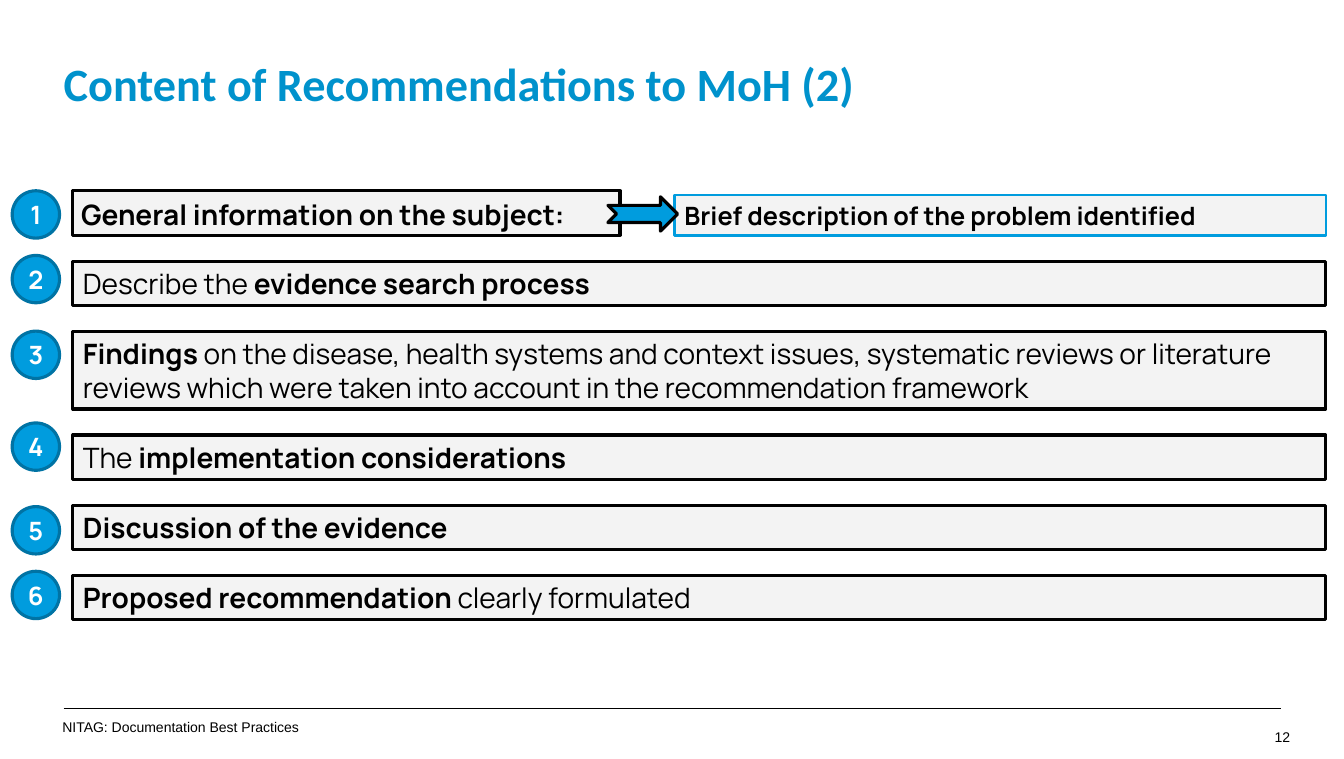
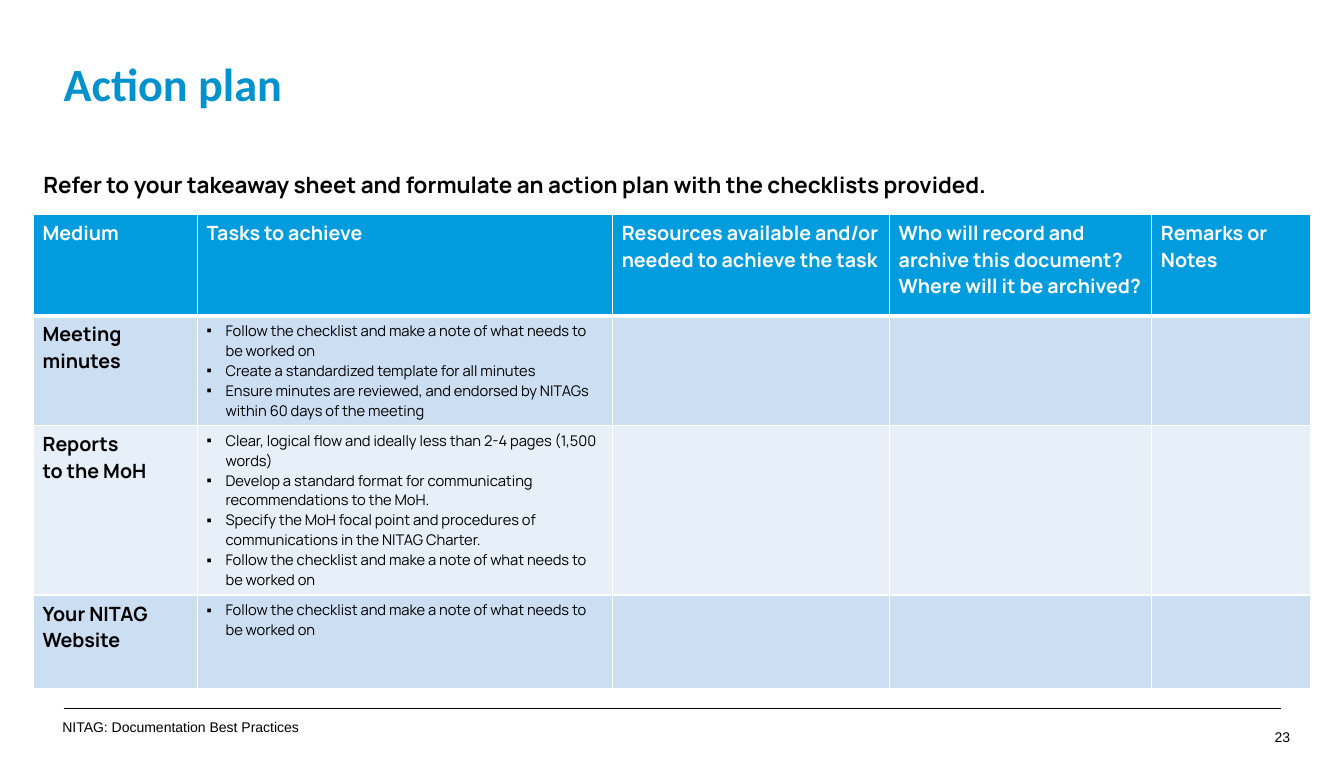
from lxml import etree
from pptx import Presentation
from pptx import util as u
from pptx.dml.color import RGBColor
from pptx.enum import shapes, text
from pptx.oxml.ns import qn

Pt = u.Pt
HUES = {
    "ink": "000000", "white": "FFFFFF", "title": "0092CC", "blue": "009CDE",
    "rim": "0073A4", "grey": "F3F3F3", "band": "CCDEF2", "pale": "E7EFF9",
}
KINDS = shapes.MSO_SHAPE
MID = text.MSO_ANCHOR.MIDDLE
MARGIN = 45.4


def hue(name):
    return RGBColor.from_string(HUES[name])


def bullet(para):
    props = para._p.get_or_add_pPr()
    props.set("marL", str(Pt(13.5)))
    props.set("indent", str(-Pt(13.5)))
    etree.SubElement(props, qn("a:buFont")).set("typeface", "Arial")
    etree.SubElement(props, qn("a:buChar")).set("char", "▪")


def write(frame, words, size=20, font="Manrope", color="ink", bold=False,
          align=None, space=None, anchor=None, pad=(7.2, 3.6), dots=False):
    frame.word_wrap = True
    frame.margin_left = frame.margin_right = Pt(pad[0])
    frame.margin_top = frame.margin_bottom = Pt(pad[1])
    if anchor is not None:
        frame.vertical_anchor = anchor
    for i, line in enumerate(words.split("\n")):
        para = frame.add_paragraph() if i else frame.paragraphs[0]
        if space:
            para.line_spacing = space
        if dots:
            bullet(para)
        if align is not None:
            para.alignment = align
        for j, part in enumerate(line.split("*")):
            if not part:
                continue
            run = para.add_run()
            run.text = part
            run.font.size = Pt(size)
            run.font.name = font
            run.font.bold = bold or j % 2 == 1
            run.font.color.rgb = hue(color)


class Deck:
    def __init__(self):
        self.prs = Presentation()
        self.prs.slide_width = Pt(958.4)
        self.prs.slide_height = Pt(541.4)
        self.slide = None

    def page(self, title, number):
        self.slide = self.prs.slides.add_slide(self.prs.slide_layouts[6])
        self.label(title, MARGIN, 43.2, 865.4, 37.4, size=33, font="Calibri",
                   color="title", bold=True, space=0.9, pad=(0, 0.7))
        self.rule(MARGIN, 505.4, 913.4)
        self.label("NITAG: Documentation Best Practices", 37.4, 509, 277, 18,
                   size=10, font="Arial")
        self.label(str(number), 897, 519.8, 23, 14.4, size=10, font="Arial",
                   align=text.PP_ALIGN.RIGHT, pad=(0, 0))

    def label(self, words, x, y, w, h, **style):
        box = self.slide.shapes.add_textbox(Pt(x), Pt(y), Pt(w), Pt(h))
        write(box.text_frame, words, **style)

    def rule(self, x, y, end):
        line = self.slide.shapes.add_connector(
            shapes.MSO_CONNECTOR.STRAIGHT, Pt(x), Pt(y), Pt(end), Pt(y))
        line.line.color.rgb = hue("ink")
        line.line.width = Pt(0.75)
        etree.SubElement(line._element.spPr, qn("a:effectLst"))

    def shape(self, kind, x, y, w, h, fill="grey", edge="ink", width=2.25,
              words="", **style):
        item = self.slide.shapes.add_shape(kind, Pt(x), Pt(y), Pt(w), Pt(h))
        item.shadow.inherit = False
        item.fill.solid()
        item.fill.fore_color.rgb = hue(fill)
        item.line.color.rgb = hue(edge)
        item.line.width = Pt(width)
        if words:
            style = {"align": text.PP_ALIGN.LEFT, "anchor": MID, **style}
            write(item.text_frame, words, **style)

    def badge(self, number, y):
        self.shape(KINDS.OVAL, 8.7, y, 33.8, 33.8, "blue", "rim",
                   words=str(number), size=18, color="white", bold=True,
                   align=text.PP_ALIGN.CENTER, pad=(0, 0))

    def cell(self, cell, fill, top, base, words, **style):
        props = cell._tc.get_or_add_tcPr()
        for side, width in (("L", 1), ("R", 1), ("T", top), ("B", base)):
            line = etree.SubElement(props, qn("a:ln" + side), w=str(Pt(width)))
            paint = etree.SubElement(line, qn("a:solidFill"))
            etree.SubElement(paint, qn("a:srgbClr"), val=HUES["white"])
        cell.fill.solid()
        cell.fill.fore_color.rgb = hue(fill)
        cell.margin_left = cell.margin_right = Pt(6.5)
        cell.margin_top = cell.margin_bottom = Pt(3.6)
        if words:
            write(cell.text_frame, words, pad=(6.5, 3.6), **style)

    def table(self, x, y, cols, rows, data):
        grid = self.slide.shapes.add_table(
            len(rows), len(cols), Pt(x), Pt(y), Pt(sum(cols)), Pt(sum(rows))).table
        grid.horz_banding = False
        for col, width in zip(grid.columns, cols):
            col.width = Pt(width)
        for row, height in zip(grid.rows, rows):
            row.height = Pt(height)
        head = {"size": 14, "bold": True, "space": Pt(19.1)}
        tasks = {"size": 10.5, "dots": True, "space": Pt(14.2)}
        for r in range(len(rows)):
            fill = "blue" if r == 0 else ("pale", "band")[r % 2]
            for c in range(len(cols)):
                words = data[r][c] if c < len(data[r]) else ""
                style = tasks if r and c else head
                self.cell(grid.cell(r, c), fill, 3 if r == 1 else 1,
                          3 if r == 0 else 1, words,
                          color="ink" if r else "white", **style)


def content(deck):
    deck.page("Content of Recommendations to MoH (2)", 12)
    left, right = 52, 945.4
    brief = 481
    deck.shape(KINDS.RECTANGLE, brief, 139, right - brief, 29, edge="blue", width=1.5,
               words="Brief description of the problem identified",
               size=18, bold=True, space=Pt(21.8))
    deck.shape(KINDS.RECTANGLE, left, 136.1, 390.2, 31.7,
               words="General information on the subject:",
               bold=True, space=1.1, pad=(5.8, 0))
    bars = (
        ("Describe the *evidence search process*", 31.5),
        ("*Findings *on the disease, health systems and context issues, "
         "systematic reviews or literature reviews which were taken into "
         "account in the recommendation framework", 55.4),
        ("The *implementation considerations*", 31.5),
        ("*Discussion of the evidence*", 31.5),
        ("*Proposed recommendation *clearly formulated", 31.5),
    )
    y = 186.4
    for words, high in bars:
        deck.shape(KINDS.RECTANGLE, left, y, right - left, high,
                   words=words, space=Pt(24.1))
        y += high + 18.5
    deck.shape(KINDS.NOTCHED_RIGHT_ARROW, 433.5, 140.4, 49.7, 24.5, "blue")
    for number, y in enumerate((136.1, 182.2, 236.2, 301.7, 361.4, 407.5), 1):
        deck.badge(number, y)


def plan(deck):
    deck.page("Action plan", 23)
    follow = "Follow the checklist and make a note of what needs to be worked on"
    data = (
        ("Medium", "Tasks to achieve",
         "Resources available and/or needed to achieve the task",
         "Who will record and archive this document? Where will it be archived?",
         "Remarks or\nNotes"),
        ("Meeting\nminutes", "\n".join((
            follow,
            "Create a standardized template for all minutes",
            "Ensure minutes are reviewed, and endorsed by NITAGs within 60 days "
            "of the meeting"))),
        ("Reports\nto the MoH", "\n".join((
            "Clear, logical flow and ideally less than 2-4 pages (1,500 words)",
            "Develop a standard format for communicating recommendations to the MoH.",
            "Specify the MoH focal point and procedures of communications in the "
            "NITAG Charter.",
            follow))),
        ("Your NITAG Website", follow),
    )
    deck.table(23.9, 152.9, (117, 296, 197.5, 187, 113.5),
               (72.5, 78, 120.5, 67), data)
    deck.label("Refer to your takeaway sheet and formulate an action plan with "
               "the checklists provided.", 23.8, 118.1, 841.7, 26.6,
               size=16, bold=True, space=Pt(19.4))


def main():
    deck = Deck()
    content(deck)
    plan(deck)
    deck.prs.save("out.pptx")


if __name__ == "__main__":
    main()
